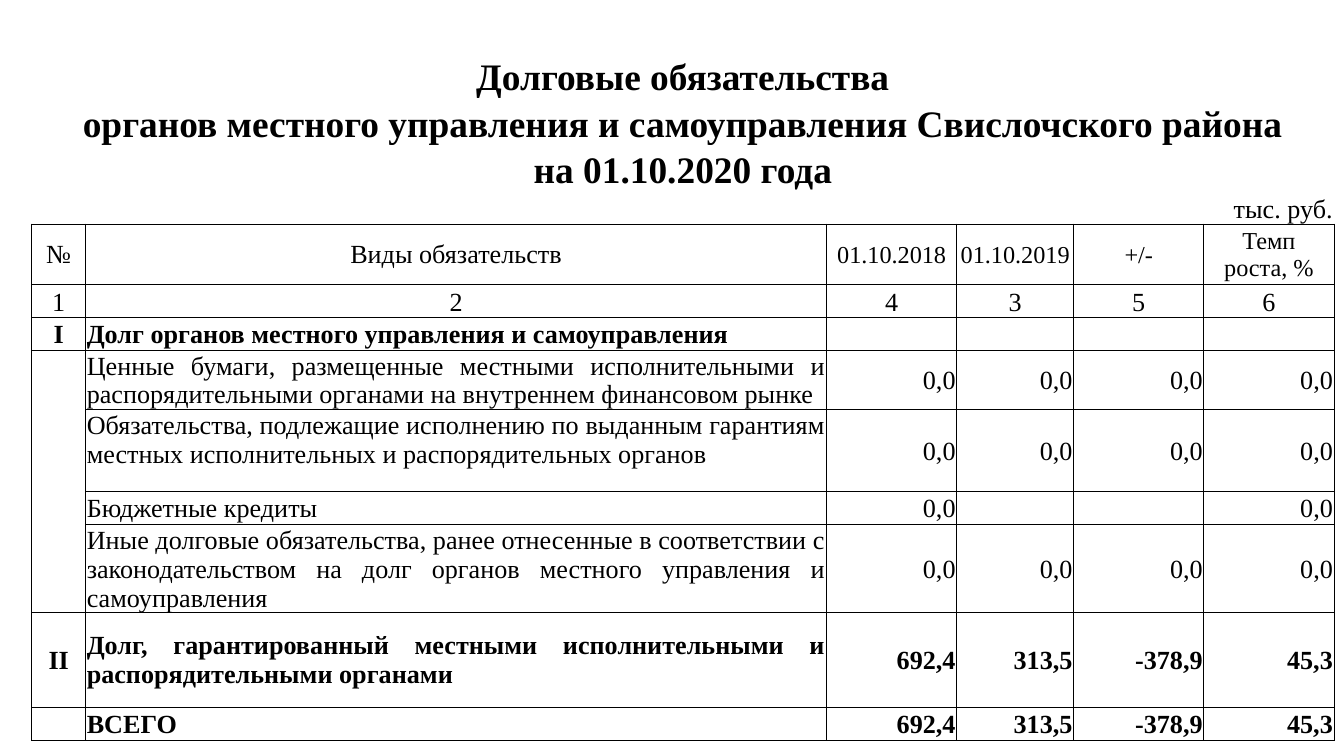
from lxml import etree
from pptx import Presentation
from pptx import util as u
from pptx.dml.color import RGBColor
from pptx.enum import text as t
from pptx.oxml.ns import qn

FONT = "Times New Roman"
BLACK, WHITE = "000000", "FFFFFF"
PLAIN_STYLE = "{2D5ABB26-0587-4C30-8999-92F81FD0307C}"
LEFT, CENTER = t.PP_ALIGN.LEFT, t.PP_ALIGN.CENTER
RIGHT, JUSTIFY = t.PP_ALIGN.RIGHT, t.PP_ALIGN.JUSTIFY
TOP, MIDDLE, BOTTOM = t.MSO_ANCHOR.TOP, t.MSO_ANCHOR.MIDDLE, t.MSO_ANCHOR.BOTTOM

COLS = [1.02, 14, 2.46, 2.21, 2.46, 2.46]
TITLE = [
    "Долговые обязательства",
    "органов местного управления и самоуправления Свислочского района",
    "на 01.10.2020 года",
]
UNIT = "тыс. руб."
HEAD = ["№", "Виды обязательств", "01.10.2018", "01.10.2019", "+/-", "Темп\nроста, %"]
ORDER = ["1", "2", "4", "3", "5", "6"]
ZEROS = ["0,0"] * 4
SUMS = ["692,4", "313,5", "-378,9", "45,3"]
DEBTS = [
    ["I", "Долг органов местного управления и самоуправления"] + [""] * 4,
    ["", "Ценные бумаги, размещенные местными исполнительными и "
         "распорядительными органами на внутреннем финансовом рынке"] + ZEROS,
    ["", "Обязательства, подлежащие исполнению по выданным гарантиям "
         "местных исполнительных и распорядительных органов"] + ZEROS,
    ["", "Бюджетные кредиты", "0,0", "", "", "0,0"],
    ["", "Иные долговые обязательства, ранее отнесенные в соответствии с "
         "законодательством на долг органов местного управления и "
         "самоуправления"] + ZEROS,
    ["II", "Долг, гарантированный местными исполнительными и "
           "распорядительными органами"] + SUMS,
    ["", "ВСЕГО"] + SUMS,
]
HEIGHTS = [0.87, 0.87, 0.87, 0.62, 1.15, 0.62, 0.57, 1.12, 1.55, 0.62, 1.66, 1.78, 0.64]
HEAD_ROW = len(TITLE) + 1
DEBT_ROW = HEAD_ROW + 2


def color(code):
    return RGBColor.from_string(code)


def write(cell, words, size=14, bold=False, align=CENTER, anchor=MIDDLE):
    cell.margin_left = cell.margin_right = cell.margin_top = u.Cm(0.02)
    cell.margin_bottom = 0
    cell.vertical_anchor = anchor
    frame = cell.text_frame
    for i, line in enumerate(words.split("\n")):
        para = frame.add_paragraph() if i else frame.paragraphs[0]
        para.alignment = align
        if not line:
            # An empty cell keeps its row low only with an explicit text size.
            etree.SubElement(para._p, qn("a:endParaRPr"), sz=str(size * 100))
            continue
        run = para.add_run()
        run.text = line
        font = run.font
        font.name, font.size, font.bold = FONT, u.Pt(size), bold
        font.color.rgb = color(BLACK)


def paint(cell, code=None):
    if code:
        cell.fill.solid()
        cell.fill.fore_color.rgb = color(code)
    else:
        cell.fill.background()


def rule(cell, sides):
    """Draw thin lines on the given sides (letters of LRTB), none on the rest."""
    props = cell._tc.get_or_add_tcPr()
    for i, side in enumerate("LRTB"):
        line = etree.Element(qn("a:ln" + side), w=str(u.Pt(0.5)))
        if side in sides:
            fill = etree.SubElement(line, qn("a:solidFill"))
            etree.SubElement(fill, qn("a:srgbClr"), val=BLACK)
        else:
            etree.SubElement(line, qn("a:noFill"))
        props.insert(i, line)


def add_grid(slide, left, top):
    frame = slide.shapes.add_table(
        len(HEIGHTS), len(COLS), u.Cm(left), u.Cm(top),
        u.Cm(sum(COLS)), u.Cm(sum(HEIGHTS)))
    table = frame.table
    table.first_row = table.horz_banding = False
    table._tbl.tblPr.find(qn("a:tableStyleId")).text = PLAIN_STYLE
    for col, width in zip(table.columns, COLS):
        col.width = u.Cm(width)
    for row, height in zip(table.rows, HEIGHTS):
        row.height = u.Cm(height)
    return table


def fill_title(table):
    last = len(TITLE)
    for r, words in enumerate(TITLE + [UNIT]):
        cells = table.rows[r].cells
        for cell in cells:
            paint(cell, WHITE if r == last - 1 else None)
            rule(cell, "B" if r == last else "")
        cells[0].merge(cells[len(COLS) - 1])
        if r < last:
            write(cells[0], words, size=20, bold=True, anchor=BOTTOM)
        else:
            write(cells[0], words, align=RIGHT, anchor=BOTTOM)


def fill_head(table):
    for c, (name, number) in enumerate(zip(HEAD, ORDER)):
        upper, lower = table.cell(HEAD_ROW, c), table.cell(HEAD_ROW + 1, c)
        write(upper, name, size=14 if c < 2 else 13)
        write(lower, number, anchor=BOTTOM)
        for cell in (upper, lower):
            paint(cell)
            rule(cell, "LRTB")


def fill_debts(table):
    first, last = 1, 4  # lines of section I, whose number column is one open box
    for i, line in enumerate(DEBTS):
        inner = first <= i <= last
        for c, words in enumerate(line):
            cell = table.cell(DEBT_ROW + i, c)
            align = [CENTER, LEFT if words == "ВСЕГО" else JUSTIFY][c] if c < 2 else RIGHT
            anchor = TOP if i == 2 and c == 1 else MIDDLE
            write(cell, words, bold=not inner, align=align, anchor=anchor)
            paint(cell, WHITE if c > 1 else None)
            sides = "LRTB"
            if inner and c == 0:
                sides = "LR" + "T" * (i == first) + "B" * (i == last)
            rule(cell, sides)


def main():
    deck = Presentation()
    deck.slide_width, deck.slide_height = u.Cm(25.4), u.Cm(14.28)
    slide = deck.slides.add_slide(deck.slide_layouts[6])
    table = add_grid(slide, 0.6, 1)
    fill_title(table)
    fill_head(table)
    fill_debts(table)
    deck.save("out.pptx")


if __name__ == "__main__":
    main()
